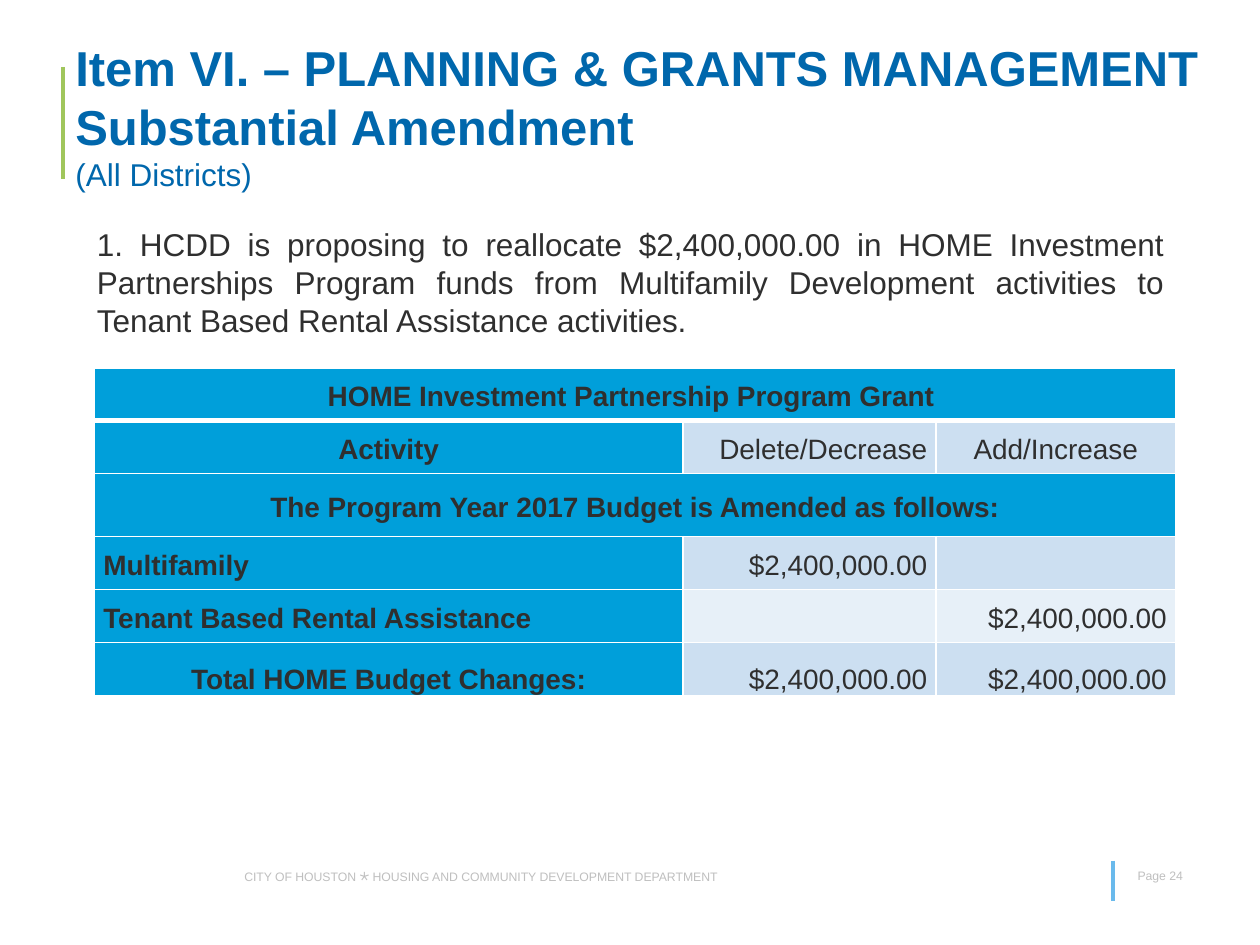
from lxml.etree import SubElement
from pptx import Presentation
from pptx.dml.color import RGBColor
from pptx.enum.shapes import MSO_CONNECTOR
from pptx.enum.text import MSO_ANCHOR, PP_ALIGN
from pptx.oxml.ns import qn
from pptx.util import Inches, Pt

WHITE = RGBColor(0xFF, 0xFF, 0xFF)
TITLE_BLUE = RGBColor(0x00, 0x67, 0xAC)
HEADER_BLUE = RGBColor(0x00, 0x9F, 0xDA)
BAND_DARK = RGBColor(0xCC, 0xDF, 0xF1)
BAND_LIGHT = RGBColor(0xE7, 0xF0, 0xF8)
INK = RGBColor(0x2F, 0x2F, 0x2F)
FOOTER_GRAY = RGBColor(0xBF, 0xBF, 0xBF)
GREEN = RGBColor(0xA0, 0xC6, 0x5C)
SKY = RGBColor(0x6A, 0xBA, 0xEC)


def write(para, text, size=16, color=INK, bold=False, align=None, spacing=None):
    """Append text to a paragraph as one formatted span per line."""
    if align is not None:
        para.alignment = align
    if spacing is not None:
        para.line_spacing = spacing
    for number, line in enumerate(text.split("\n")):
        if number:
            para.add_line_break()
        if line:
            span = para.add_run()
            span.text = line
            span.font.name = "Arial"
            span.font.size = Pt(size)
            span.font.bold = bold
            span.font.color.rgb = color


def set_border(cell, side, width):
    """Draw a white border; side is L, R, T or B."""
    border = SubElement(cell._tc.get_or_add_tcPr(), qn(f"a:ln{side}"), w=str(Pt(width)))
    fill = SubElement(border, qn("a:solidFill"))
    SubElement(fill, qn("a:srgbClr"), val=str(WHITE))


deck = Presentation()
deck.slide_width = Inches(10)
deck.slide_height = Inches(7.5)
page = deck.slides.add_slide(deck.slide_layouts[6])

# Accent bars beside the title and the page number
for x, top, bottom, color in [(8.83, 6.83, 7.15, SKY), (0.5, 0.53, 1.42, GREEN)]:
    bar = page.shapes.add_connector(
        MSO_CONNECTOR.STRAIGHT, Inches(x), Inches(top), Inches(x), Inches(bottom))
    bar.line.color.rgb = color
    bar.line.width = Pt(2.25)
    SubElement(bar._element.spPr, qn("a:effectLst"))

# Text boxes: place, anchor, alignment, then spans of text, size, colour and bold
text_boxes = [
    ((1.84, 6.81, 4.08, 0.27), MSO_ANCHOR.TOP, PP_ALIGN.LEFT, [
        ("CITY OF HOUSTON ", 7, FOOTER_GRAY, False),
        ("⋆", 10, FOOTER_GRAY, False),
        (" HOUSING AND COMMUNITY DEVELOPMENT DEPARTMENT", 7, FOOTER_GRAY, False)]),
    ((8.93, 6.84, 0.58, 0.31), MSO_ANCHOR.TOP, PP_ALIGN.LEFT, [
        ("Page 24", 7, FOOTER_GRAY, False)]),
    ((0.5, 0.25, 9.5, 1.33), MSO_ANCHOR.MIDDLE, PP_ALIGN.LEFT, [
        ("Item VI. – PLANNING & GRANTS MANAGEMENT\nSubstantial Amendment\n",
         28, TITLE_BLUE, True),
        ("(All Districts)", 18, TITLE_BLUE, False)]),
    ((0.67, 1.74, 8.67, 1.01), MSO_ANCHOR.TOP, PP_ALIGN.JUSTIFY, [
        ("1. HCDD is proposing to reallocate $2,400,000.00 in HOME Investment "
         "Partnerships Program funds from Multifamily Development activities to "
         "Tenant Based Rental Assistance activities.", 18, INK, False)]),
]
for place, anchor, align, spans in text_boxes:
    box = page.shapes.add_textbox(*map(Inches, place))
    box.text_frame.word_wrap = True
    box.text_frame.vertical_anchor = anchor
    for text, size, color, bold in spans:
        write(box.text_frame.paragraphs[0], text, size=size, color=color,
              bold=bold, align=align)

# Budget table: a row with one text spans all columns
LEFT, CENTER, RIGHT = PP_ALIGN.LEFT, PP_ALIGN.CENTER, PP_ALIGN.RIGHT
AMOUNT = "$2,400,000.00"
column_widths = [4.67, 2.01, 1.9]
budget_rows = [
    (0.42, BAND_DARK, [("HOME Investment Partnership Program Grant ", CENTER)]),
    (0.42, BAND_DARK, [("Activity", CENTER), ("Delete/Decrease", RIGHT),
                       ("Add/Increase", CENTER)]),
    (0.5, BAND_DARK, [("The Program Year 2017 Budget is Amended as follows:", CENTER)]),
    (0.42, BAND_DARK, [("Multifamily", LEFT), (AMOUNT, RIGHT), ("", RIGHT)]),
    (0.42, BAND_LIGHT, [("Tenant Based Rental Assistance", LEFT), ("", RIGHT),
                        (AMOUNT, RIGHT)]),
    (0.42, BAND_DARK, [("Total HOME Budget Changes:", CENTER), (AMOUNT, RIGHT),
                       (AMOUNT, RIGHT)]),
]
table = page.shapes.add_table(
    len(budget_rows), len(column_widths), Inches(0.75), Inches(2.92),
    Inches(sum(column_widths)), Inches(sum(row[0] for row in budget_rows))).table
for column, width in zip(table.columns, column_widths):
    column.width = Inches(width)

last_row = len(budget_rows) - 1
for row, (height, band, entries) in enumerate(budget_rows):
    table.rows[row].height = Inches(height)
    if len(entries) == 1:
        table.cell(row, 0).merge(table.cell(row, len(column_widths) - 1))
    for column in range(len(column_widths)):
        cell = table.cell(row, column)
        cell.margin_left = cell.margin_right = Inches(0.07)
        cell.margin_top = cell.margin_bottom = 0
        cell.vertical_anchor = MSO_ANCHOR.BOTTOM if row == last_row else MSO_ANCHOR.MIDDLE
        for side in "LRTB":
            heavy = (row, side) in [(0, "B"), (1, "T")]
            set_border(cell, side, 3 if heavy else 1)
        cell.fill.solid()
        cell.fill.fore_color.rgb = HEADER_BLUE if column == 0 or len(entries) == 1 else band
        if column < len(entries):
            text, align = entries[column]
            write(cell.text_frame.paragraphs[0], text, bold=column == 0,
                  align=align, spacing=1.15)

deck.save("out.pptx")
